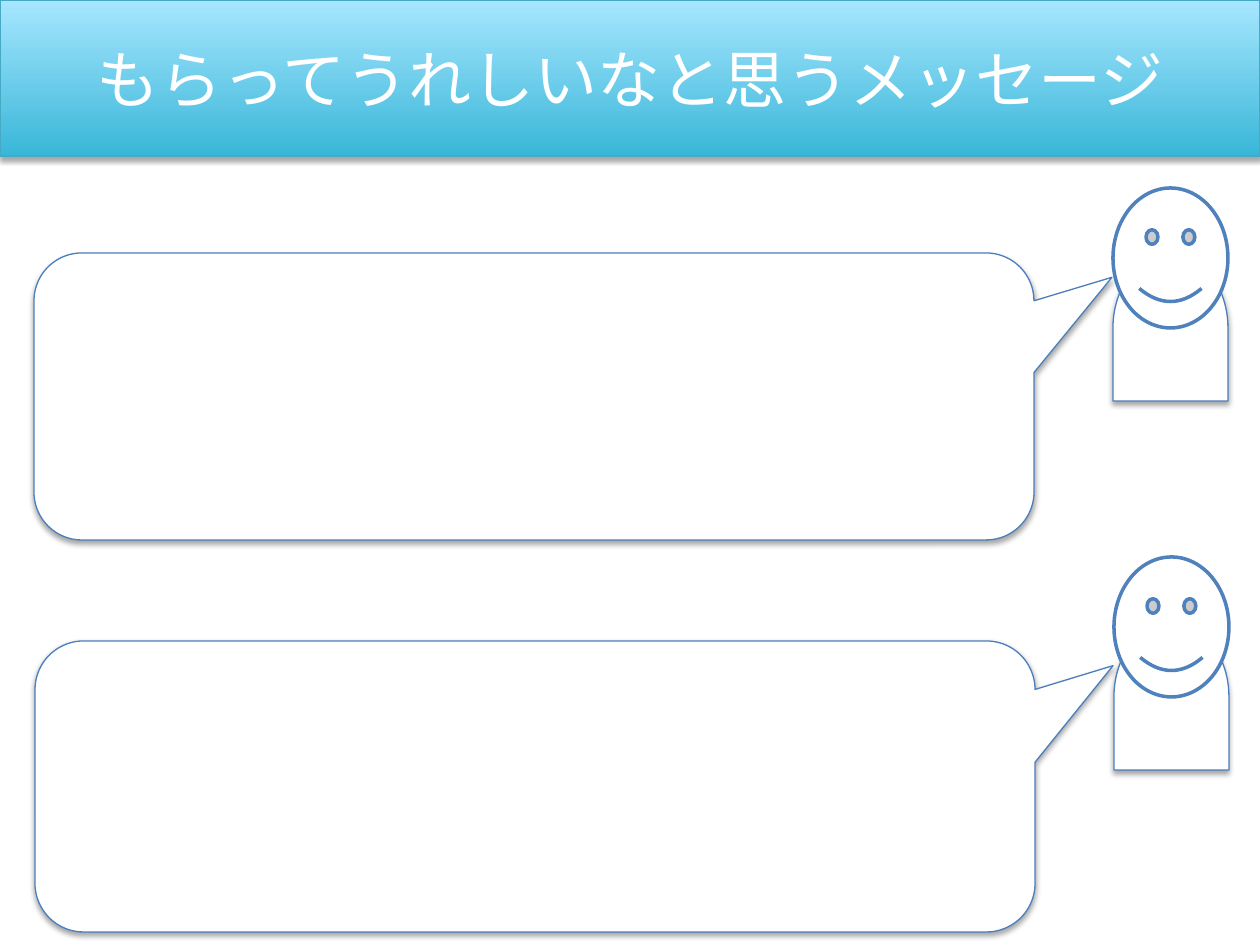
from lxml import etree
from pptx import Presentation, util as u
from pptx.dml.color import RGBColor
from pptx.enum import shapes, text
from pptx.oxml.ns import qn

PX = 914400 / 126
WIDTH, HEIGHT = 1260, 945
WHITE = RGBColor(0xFF, 0xFF, 0xFF)
OUTLINE = RGBColor(0x4B, 0x7E, 0xBC)
FACE_LINE = RGBColor(0x4F, 0x81, 0xBD)
BANNER_LINE = RGBColor(0x46, 0xAA, 0xC5)
BANNER_BOTTOM = RGBColor(0x39, 0xB7, 0xD8)
BANNER_TOP = RGBColor(0xA7, 0xE6, 0xFF)
KIND = shapes.MSO_SHAPE


def px(length):
    return u.Emu(round(length * PX))


def add_outlined(slide, kind, box, color=OUTLINE, weight=0.75):
    shape = slide.shapes.add_shape(kind, *map(px, box))
    shape.shadow.inherit = False
    shape.fill.solid()
    shape.fill.fore_color.rgb = WHITE
    shape.line.color.rgb = color
    shape.line.width = u.Pt(weight)
    return shape


def drop_shadow(shape):
    effects = shape._element.spPr.find(qn("a:effectLst"))
    shadow = etree.SubElement(
        effects, qn("a:outerShdw"), blurRad=str(u.Pt(3.1)),
        dist=str(u.Pt(1.8)), dir="5400000", rotWithShape="0")
    black = etree.SubElement(shadow, qn("a:srgbClr"), val="000000")
    etree.SubElement(black, qn("a:alpha"), val="35000")


def add_banner(slide, box, title):
    banner = add_outlined(slide, KIND.RECTANGLE, box, BANNER_LINE)
    drop_shadow(banner)
    banner.fill.gradient()
    banner.fill.gradient_angle = 90
    for stop, color, position in zip(banner.fill.gradient_stops,
                                     (BANNER_BOTTOM, BANNER_TOP), (0, 1)):
        stop.color.rgb = color
        stop.position = position
    frame = banner.text_frame
    frame.word_wrap = True
    frame.vertical_anchor = text.MSO_ANCHOR.MIDDLE
    line = frame.paragraphs[0]
    line.alignment = text.PP_ALIGN.CENTER
    run = line.add_run()
    run.text = title
    run.font.size = u.Pt(36)
    run.font.name = "Calibri"
    run.font.color.rgb = WHITE


def add_person(slide, box):
    left, top, width, height = box
    head_height, body_height = 140, 147
    # Body: drawn lying down, then turned upright about its centre
    middle_x = left + width / 2
    middle_y = top + height - body_height / 2
    body = add_outlined(slide, KIND.FLOWCHART_DELAY,
                        (middle_x - body_height / 2, middle_y - width / 2,
                         body_height, width))
    body.rotation = 270
    drop_shadow(body)
    # Head
    add_outlined(slide, KIND.SMILEY_FACE, (left, top, width, head_height),
                 FACE_LINE, 2)


def add_bubble(slide, box):
    bubble = add_outlined(slide, KIND.ROUNDED_RECTANGULAR_CALLOUT, box)
    for i, value in enumerate((0.578, -0.415, 0.167)):
        bubble.adjustments[i] = value
    drop_shadow(bubble)


def add_message(slide, box, bubble_top, bubble_height):
    """A speech bubble on the left, its speaker at the top right."""
    left, top, width, _ = box
    person_width, person_height = 115, 213
    add_person(slide, (left + width - person_width, top,
                       person_width, person_height))
    add_bubble(slide, (left, top + bubble_top, 1000, bubble_height))


def main():
    deck = Presentation()
    deck.slide_width, deck.slide_height = px(WIDTH), px(HEIGHT)
    slide = deck.slides.add_slide(deck.slide_layouts[6])
    add_message(slide, (34, 188, 1194, 352), 65, 287)
    add_message(slide, (35, 557, 1194, 375), 84, 291)
    add_banner(slide, (0, 0, WIDTH, 156), "もらってうれしいなと思うメッセージ")
    deck.save("out.pptx")


if __name__ == "__main__":
    main()
